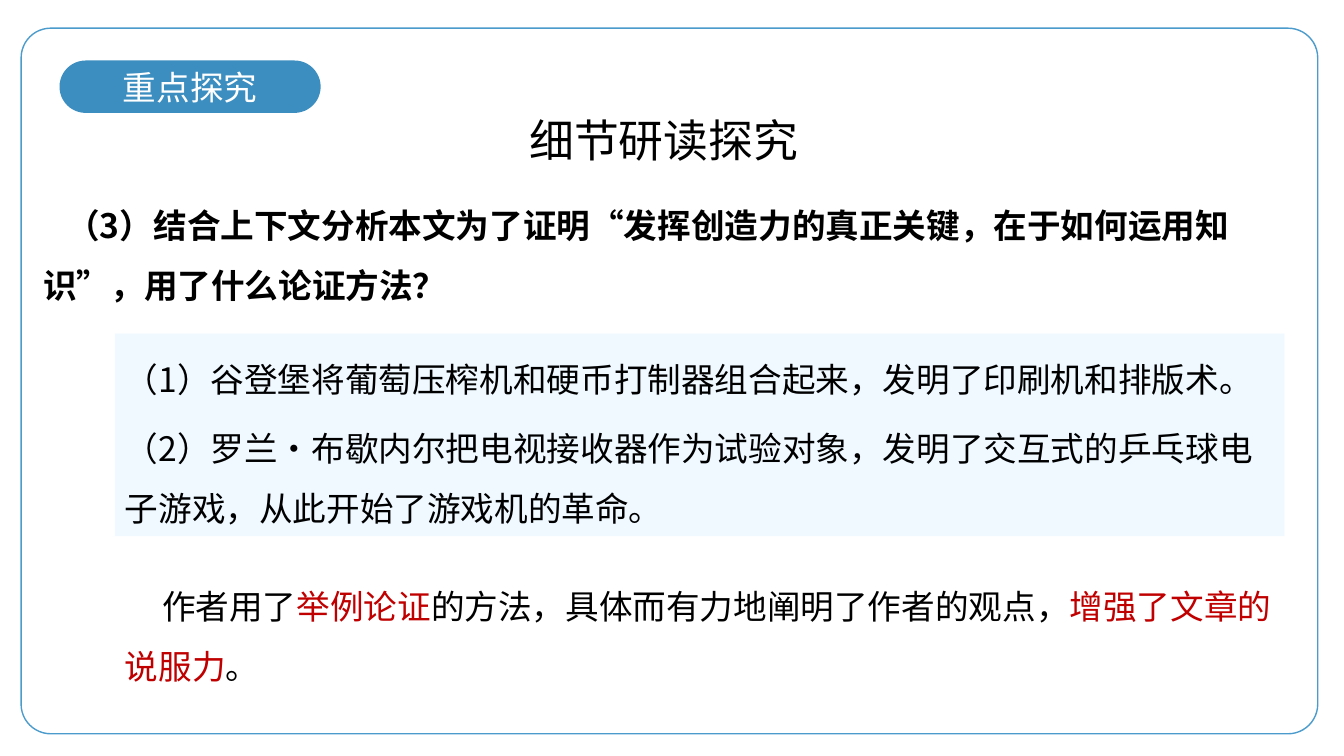
from lxml import etree
from pptx import Presentation
from pptx.dml.color import RGBColor
from pptx.enum import shapes, text
from pptx.oxml.ns import qn
from pptx.util import Inches, Pt

WHITE = RGBColor(0xFF, 0xFF, 0xFF)
BLACK = RGBColor(0, 0, 0)
RED = RGBColor(0xC0, 0, 0)
BLUE = RGBColor(0x3C, 0x8E, 0xC0)
FRAME_BLUE = RGBColor(0x4B, 0x9B, 0xCC)
PALE_BLUE = RGBColor(0xEF, 0xF9, 0xFF)
CJK = "Noto Sans CJK SC"
RECT = shapes.MSO_SHAPE.RECTANGLE
ROUND = shapes.MSO_SHAPE.ROUNDED_RECTANGLE


class Deck:
    """Holds the body style and the current slide."""

    size = 24
    spacing = 1.5

    def __init__(self, prs):
        self.slide = prs.slides.add_slide(prs.slide_layouts[6])

    def panel(self, box, kind=ROUND, fill=None, line=None, radius=None):
        sp = self.slide.shapes.add_shape(kind, *map(Inches, box))
        sp.shadow.inherit = False
        if radius is not None:
            sp.adjustments[0] = radius
        if fill is None:
            sp.fill.background()
        else:
            sp.fill.solid()
            sp.fill.fore_color.rgb = fill
        if line is None:
            sp.line.fill.background()
        else:
            sp.line.color.rgb = line
            sp.line.width = Pt(1)
        return sp

    def font(self, p, size, color, name=CJK, bold=False):
        p.font.size = Pt(size)
        p.font.bold = bold
        p.font.color.rgb = color
        p.font.name = name
        latin = p.font._element.find(qn("a:latin"))
        ea = etree.Element(qn("a:ea"), typeface=name)
        latin.addnext(ea)

    def label(self, box, words, size, color, name=CJK, fill=None):
        """Centred words in a pill."""
        sp = self.panel(box, fill=fill, radius=0.5)
        tf = sp.text_frame
        tf.vertical_anchor = text.MSO_ANCHOR.MIDDLE
        p = tf.paragraphs[0]
        p.alignment = text.PP_ALIGN.CENTER
        p.add_run().text = words
        self.font(p, size, color, name)
        return sp

    def textbox(self, box):
        return self.slide.shapes.add_textbox(*map(Inches, box))

    def body(self, sp, paragraphs, indent=0, bold=False):
        """Fill sp with paragraphs, each a list of (words, color) runs."""
        tf = sp.text_frame
        tf.word_wrap = True
        tf.vertical_anchor = text.MSO_ANCHOR.TOP
        for i, runs in enumerate(paragraphs):
            p = tf.add_paragraph() if i else tf.paragraphs[0]
            p.alignment = text.PP_ALIGN.LEFT
            p.line_spacing = self.spacing
            if i:
                p.space_before = Pt(6)
            if indent:
                p._p.get_or_add_pPr().set("indent", str(Inches(indent)))
            for words, color in runs:
                r = p.add_run()
                r.text = words
                if color != BLACK:
                    r.font.color.rgb = color
            self.font(p, self.size, BLACK, bold=bold)


def main():
    prs = Presentation()
    prs.slide_width, prs.slide_height = Inches(13.33), Inches(7.5)
    deck = Deck(prs)

    deck.label((0.59, 0.6, 2.59, 0.52), "重点探究", 24, WHITE, "Calibri", BLUE)
    deck.panel((0.21, 0.28, 12.86, 7), line=FRAME_BLUE, radius=0.042)
    deck.label((4.53, 1.12, 4.11, 0.54), "细节研读探究", 32, BLACK)

    question = deck.textbox((0.33, 1.78, 12.41, 1.29))
    deck.body(question, [[("（3）结合上下文分析本文为了证明“发挥创造力的真正关键，"
                           "在于如何运用知识”，用了什么论证方法？", BLACK)]],
              indent=0.23, bold=True)

    examples = deck.panel((1.14, 3.31, 11.6, 2.01), RECT, PALE_BLUE)
    deck.body(examples, [
        [("（1）谷登堡将葡萄压榨机和硬币打制器组合起来，发明了印刷机和排版术。", BLACK)],
        [("（2）罗兰·布歇内尔把电视接收器作为试验对象，发明了交互式的乒乓球"
          "电子游戏，从此开始了游戏机的革命。", BLACK)],
    ])

    answer = deck.textbox((1.14, 5.56, 11.6, 1.43))
    deck.body(answer, [[
        ("作者用了", BLACK),
        ("举例论证", RED),
        ("的方法，具体而有力地阐明了作者的观点，", BLACK),
        ("增强了文章的说服力", RED),
        ("。", BLACK),
    ]], indent=0.37)

    prs.save("out.pptx")


if __name__ == "__main__":
    main()
